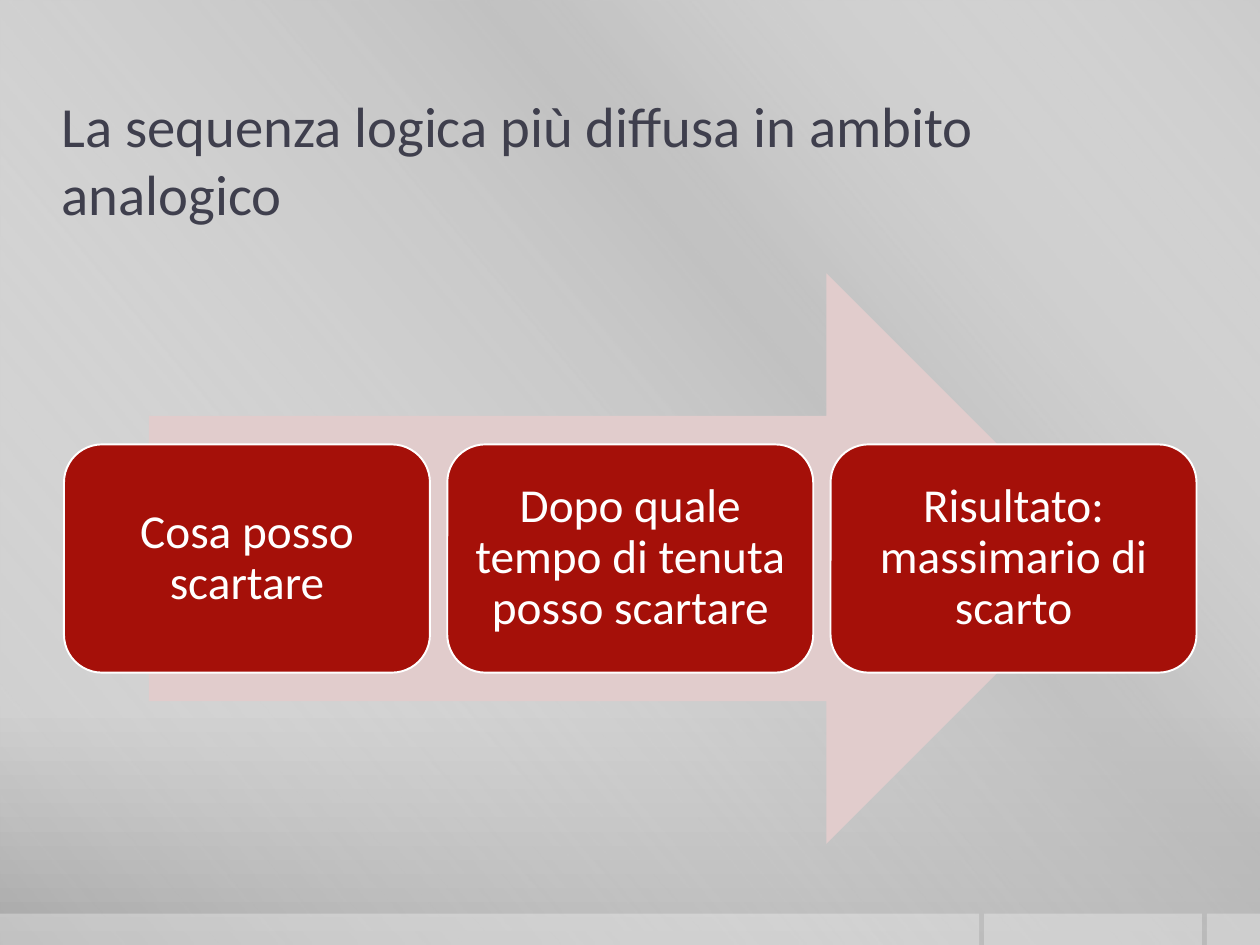
from lxml import etree
from pptx import Presentation
from pptx.dml.color import RGBColor
from pptx.enum.shapes import MSO_SHAPE
from pptx.enum.text import MSO_ANCHOR, PP_ALIGN
from pptx.oxml.ns import qn
from pptx.util import Cm, Pt

RECTANGLE = MSO_SHAPE.RECTANGLE
ROUNDED = MSO_SHAPE.ROUNDED_RECTANGLE
RIGHT_ARROW = MSO_SHAPE.RIGHT_ARROW
MIDDLE = MSO_ANCHOR.MIDDLE
CENTER = PP_ALIGN.CENTER

FONT = "Calibri"
COLORS = {
    "white": "FFFFFF",
    "title": "3F3F4D",
    "arrow": "E1CCCC",
    "step": "A51009",
    "sky": "CBCBCB",
    "haze": "C8C8C8",
    "floor": "A7A7A7",
    "beam": "BFBFBF",
}
STEPS = [
    "Cosa posso scartare",
    "Dopo quale tempo di tenuta posso scartare",
    "Risultato: massimario di scarto",
]


def rgb(name):
    return RGBColor.from_string(COLORS[name])


def set_alpha(color_element, percent):
    etree.SubElement(color_element, qn("a:alpha"), val=str(percent * 1000))


def fill_gradient(fill, owner, stops, angle):
    fill.gradient()
    fill.gradient_angle = 360 - angle
    stop_list = next(owner.iter(qn("a:gsLst")))
    for default_stop in list(stop_list):
        stop_list.remove(default_stop)
    for position, name, alpha in stops:
        stop = etree.SubElement(stop_list, qn("a:gs"), pos=str(position * 1000))
        color = etree.SubElement(stop, qn("a:srgbClr"), val=COLORS[name])
        set_alpha(color, alpha)


def add_plain_shape(slide, kind, left, top, width, height, color):
    shape = slide.shapes.add_shape(kind, Cm(left), Cm(top), Cm(width), Cm(height))
    shape.shadow.inherit = False
    shape.fill.solid()
    shape.fill.fore_color.rgb = rgb(color)
    shape.line.fill.background()
    return shape


def write_text(frame, text, size, color, inset_x, inset_y):
    frame.word_wrap = True
    frame.vertical_anchor = MIDDLE
    frame.margin_left = frame.margin_right = Cm(inset_x)
    frame.margin_top = frame.margin_bottom = Cm(inset_y)
    paragraph = frame.paragraphs[0]
    paragraph.text = text
    paragraph.font.name = FONT
    paragraph.font.size = Pt(size)
    paragraph.font.color.rgb = rgb(color)
    return paragraph


def add_backdrop(slide, width, height):
    fill_gradient(slide.background.fill, slide.element,
                  [(0, "sky", 100), (76, "haze", 100), (100, "floor", 100)], 90)
    beam = add_plain_shape(slide, RECTANGLE, 0, 0, width, height, "white")
    fill_gradient(beam.fill, beam.element,
                  [(0, "white", 0), (34, "beam", 61),
                   (38, "beam", 76), (100, "white", 0)], 140)


def add_footer_strip(slide, left, top, height):
    gap = 0.1
    for width in (19.74, 4.39, 1.07):
        bar = add_plain_shape(slide, RECTANGLE, left, top, width, height, "white")
        set_alpha(next(bar.element.spPr.iter(qn("a:srgbClr"))), 30)
        left += width + gap


def add_title(slide, left, top, width, height):
    title = slide.shapes.add_textbox(Cm(left), Cm(top), Cm(width), Cm(height))
    write_text(title.text_frame, "La sequenza logica più diffusa in ambito analogico",
               32.4, "title", 0, 0.13)


def add_process(slide, left, top, width, height):
    arrow_width = width * 0.85
    add_plain_shape(slide, RIGHT_ARROW, left + (width - arrow_width) / 2, top,
                    arrow_width, height, "arrow")
    gap = 0.35
    step_width = (width - gap * (len(STEPS) - 1)) / len(STEPS)
    step_height = height * 0.4
    step_top = top + (height - step_height) / 2
    for index, text in enumerate(STEPS):
        step = add_plain_shape(slide, ROUNDED, left + index * (step_width + gap),
                               step_top, step_width, step_height, "step")
        step.line.color.rgb = rgb("white")
        step.line.width = Pt(1.1)
        paragraph = write_text(step.text_frame, text, 27, "white", 0.28, 0.28)
        paragraph.alignment = CENTER
        paragraph.line_spacing = 0.9


def main():
    deck = Presentation()
    deck.slide_width, deck.slide_height = Cm(25.4), Cm(19.05)
    slide = deck.slides.add_slide(deck.slide_layouts[6])
    add_backdrop(slide, 25.4, 19.05)
    add_footer_strip(slide, 0, 18.42, 0.63)
    add_title(slide, 1.24, 1.93, 22.86, 2.54)
    add_process(slide, 1.29, 5.51, 22.83, 11.5)
    deck.save("out.pptx")


if __name__ == "__main__":
    main()
